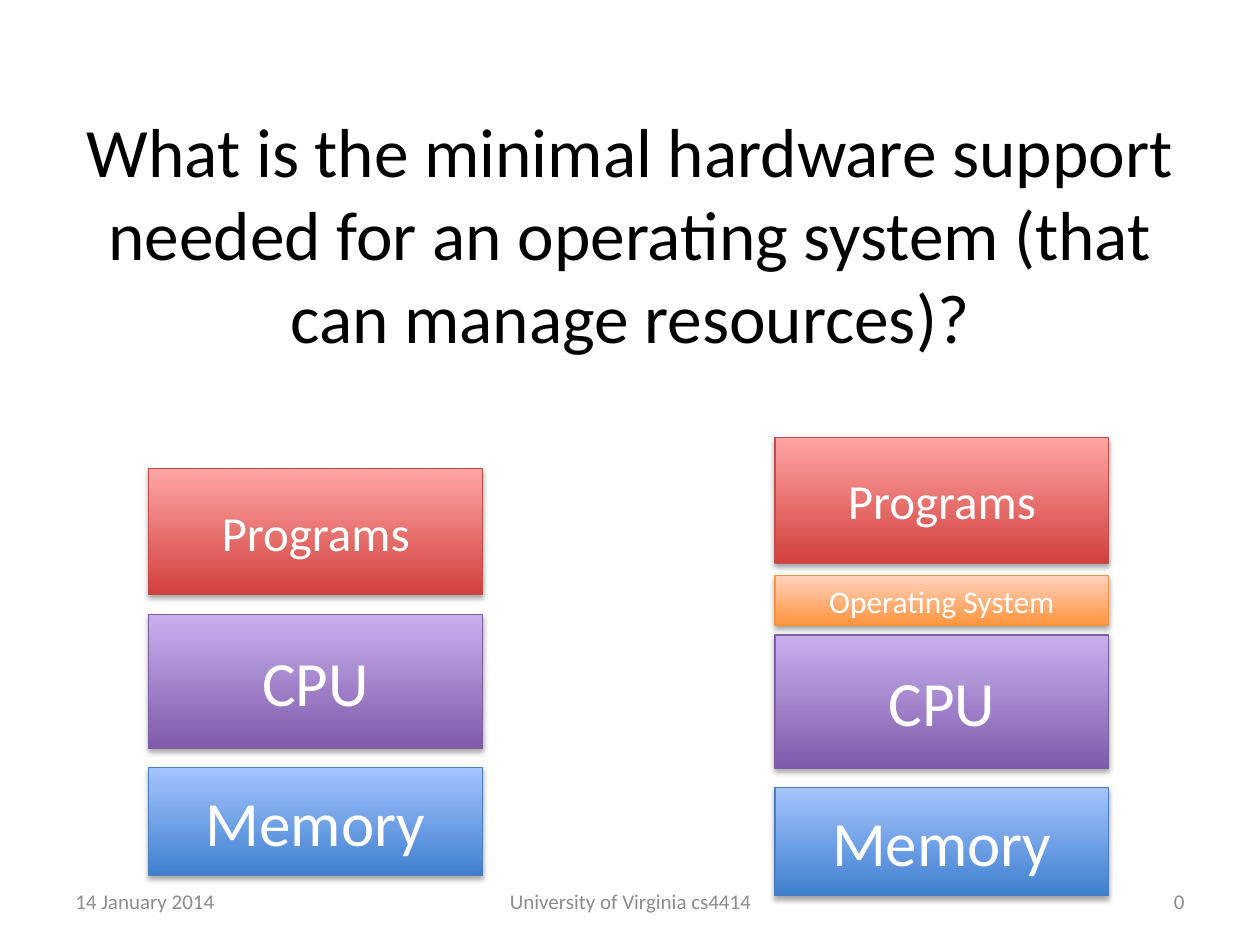
import pptx
import pptx.util
import pptx.dml.color
import pptx.enum.shapes
import pptx.enum.text
import pptx.oxml

Pt = pptx.util.Pt
RGB = pptx.dml.color.RGBColor.from_string
ALIGN = pptx.enum.text.PP_ALIGN
MID = pptx.enum.text.MSO_ANCHOR.MIDDLE

# The slide is a grid of 100 columns by 75 rows.
COLS, ROWS = 100, 75
HEX = {"black": "000000", "white": "FFFFFF", "gray": "8C8C8C"}
# Each kind of box: dark end, light end, outline
TONES = {
    "Memory": ("3F80CE", "A4C4FF", "4B7EBC"),
    "CPU": ("7F5BAB", "C8B0ED", "7D60A0"),
    "Programs": ("D1403C", "FFA6A5", "BF4C48"),
    "Operating System": ("FF953E", "FFD2BD", "F69240"),
}
# Height in rows and text size
SIZES = {"Memory": (8.6, 36), "CPU": (10.6, 36),
         "Programs": (10, 28), "Operating System": (3.9, 18)}
# Left column of each stack, and the top row of each box in it
STACKS = [
    (11.8, {"Memory": 60.9, "CPU": 48.8, "Programs": 37.2}),
    (61.5, {"Memory": 62.5, "CPU": 50.4, "Programs": 34.7,
            "Operating System": 45.7}),
]
SHADOW = (
    '<a:effectLst xmlns:a="http://schemas.openxmlformats.org/drawingml/2006/main">'
    '<a:outerShdw blurRad="40000" dist="23000" dir="5400000" rotWithShape="0">'
    '<a:srgbClr val="000000"><a:alpha val="35000"/></a:srgbClr>'
    '</a:outerShdw></a:effectLst>'
)

deck = pptx.Presentation()
deck.slide_width = pptx.util.Inches(10)
deck.slide_height = pptx.util.Inches(7.5)
slide = deck.slides.add_slide(deck.slide_layouts[5])


def place(col, row, wide, high):
    """Turn grid units into left, top, width and height."""
    x, y = deck.slide_width / COLS, deck.slide_height / ROWS
    return int(col * x), int(row * y), int(wide * x), int(high * y)


def write(shape, text, size, color, align):
    frame = shape.text_frame
    frame.text = text
    frame.word_wrap = True
    frame.vertical_anchor = MID
    line = frame.paragraphs[0]
    line.alignment = align
    font = line.runs[0].font
    font.name = "Calibri"
    font.size = Pt(size)
    font.color.rgb = RGB(HEX[color])


title = slide.shapes.title
title.left, title.top, title.width, title.height = place(5, 8.3, 90, 20.3)
write(title, "What is the minimal hardware support needed for an operating "
      "system (that can manage resources)?", 39.6, "black", ALIGN.CENTER)

for left, tops in STACKS:
    for name, top in tops.items():
        high, size = SIZES[name]
        dark, light, edge = TONES[name]
        box = slide.shapes.add_shape(
            pptx.enum.shapes.MSO_SHAPE.RECTANGLE, *place(left, top, 26.5, high))
        box.fill.gradient()
        box.fill.gradient_angle = 90
        for stop, tone, spot in zip(box.fill.gradient_stops, (dark, light), (0, 1)):
            stop.color.rgb = RGB(tone)
            stop.position = spot
        box.line.color.rgb = RGB(edge)
        box.line.width = Pt(0.75)
        box._element.spPr.append(pptx.oxml.parse_xml(SHADOW))
        write(box, name, size, "white", ALIGN.CENTER)

for text, left, wide, align in [
    ("14 January 2014", 5, 23.3, ALIGN.LEFT),
    ("University of Virginia cs4414", 34.2, 31.7, ALIGN.CENTER),
    ("0", 71.7, 23.3, ALIGN.RIGHT),
]:
    foot = slide.shapes.add_textbox(*place(left, 69.5, wide, 4))
    write(foot, text, 12, "gray", align)

deck.save("out.pptx")
